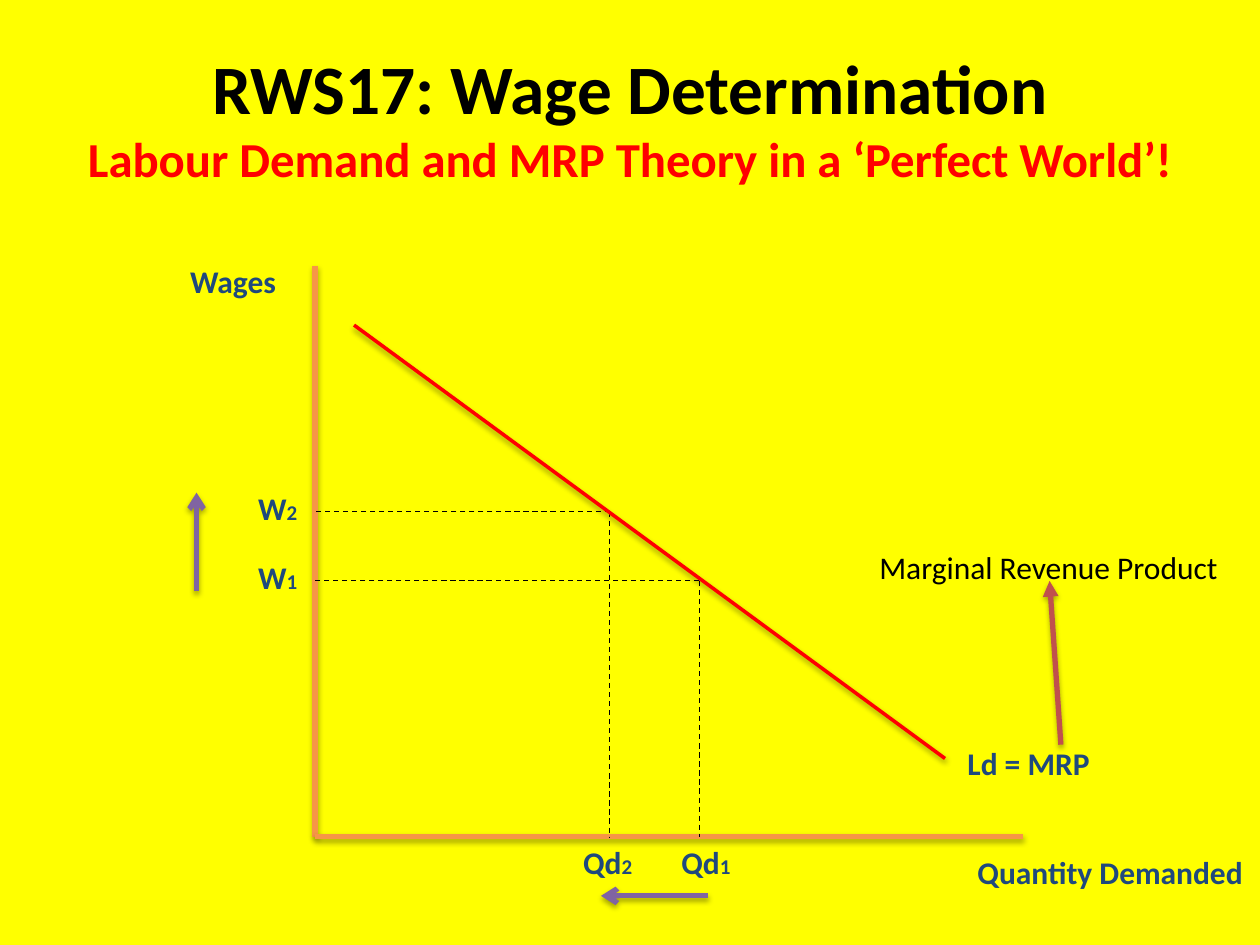
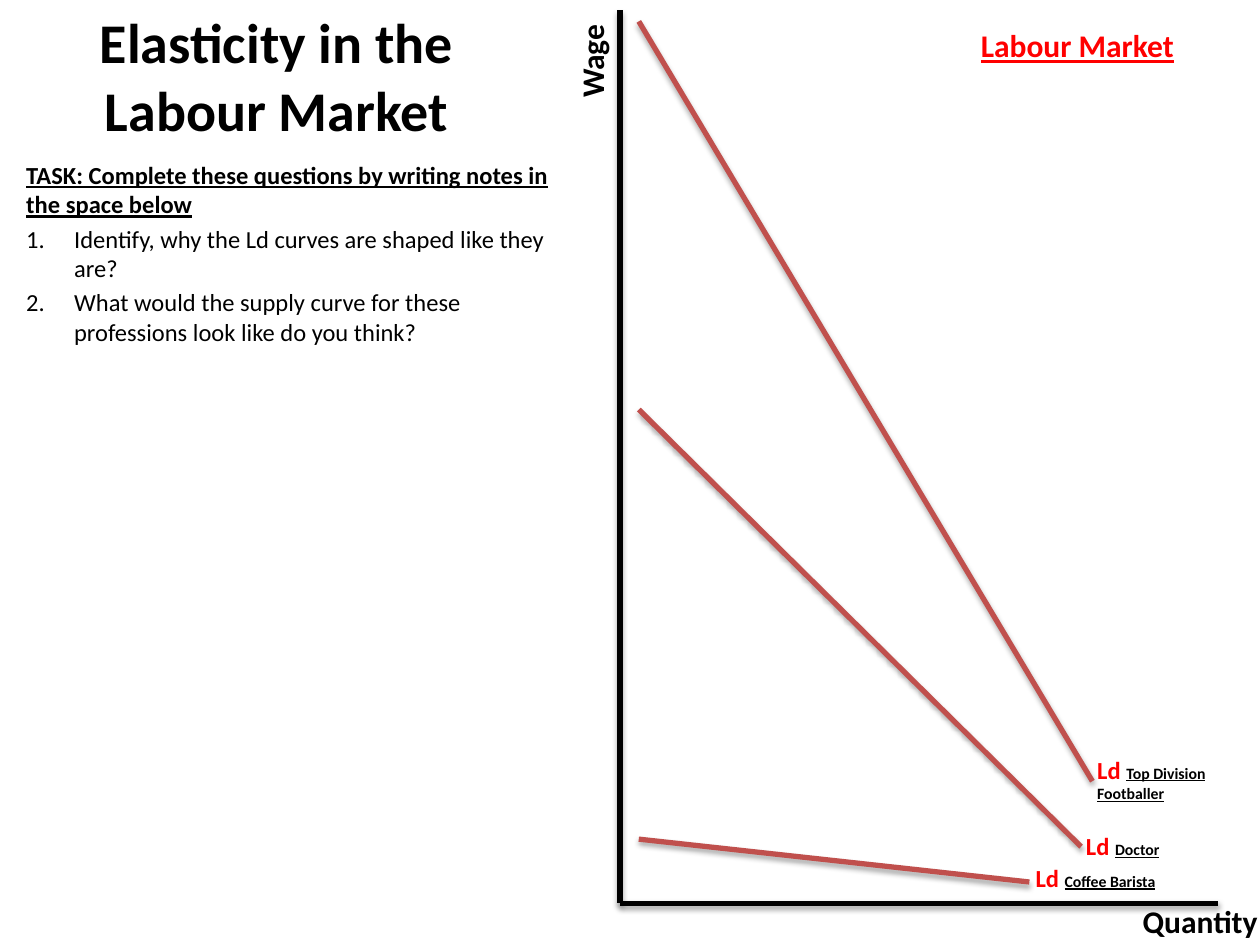
from typing import NamedTuple, Optional, Sequence

from lxml import etree
from pptx import Presentation
from pptx.dml.color import RGBColor
from pptx.enum.dml import MSO_LINE_DASH_STYLE as Dash
from pptx.enum.shapes import MSO_CONNECTOR as Connector
from pptx.enum.text import MSO_ANCHOR as Anchor, PP_ALIGN as Align
from pptx.oxml.ns import qn
from pptx.util import Inches, Pt

FONT = "Calibri"
BLACK, RED, YELLOW, WHITE = "000000", "FF0000", "FFFF00", "FFFFFF"
NAVY, ORANGE, PURPLE, BRICK = "1F497D", "F79646", "8064A2", "C0504D"
LABEL_HEIGHT = 0.4


class Run(NamedTuple):
    text: str
    size: float = 18
    color: str = BLACK
    bold: bool = True
    underline: bool = False


class Para(NamedTuple):
    runs: Sequence[Run]
    numbered: bool = False


class Line(NamedTuple):
    start: tuple[float, float]
    end: tuple[float, float]
    color: str = BLACK
    width: float = 3
    head: Optional[str] = None
    dashed: bool = False
    shadow: Optional[int] = 35


class Label(NamedTuple):
    left: float
    top: float
    width: float
    runs: Sequence[Run]
    height: float = LABEL_HEIGHT


def rgb(color: str) -> RGBColor:
    return RGBColor.from_string(color)


def add_slide(prs, background: str):
    s = prs.slides.add_slide(prs.slide_layouts[6])
    s.background.fill.solid()
    s.background.fill.fore_color.rgb = rgb(background)
    return s


def number_paragraph(p) -> None:
    """Give the paragraph an automatic number and a hanging indent."""
    pPr = p._p.get_or_add_pPr()
    pPr.set("marL", str(Inches(0.38)))
    pPr.set("indent", str(-Inches(0.38)))
    etree.SubElement(pPr, qn("a:buFont"), typeface="+mj-lt")
    etree.SubElement(pPr, qn("a:buAutoNum"), type="arabicPeriod")


def add_text(s, left: float, top: float, width: float, height: float,
             paras: Sequence[Para], *, wrap: bool = True, align=Align.LEFT,
             anchor=Anchor.TOP, space: float = 0, rotation: float = 0):
    """Draw a text box; a run that ends in a newline is followed by a line break."""
    sp = s.shapes.add_textbox(*map(Inches, (left, top, width, height)))
    sp.rotation = rotation
    tf = sp.text_frame
    tf.word_wrap = wrap
    tf.vertical_anchor = anchor
    for i, para in enumerate(paras):
        p = tf.add_paragraph() if i else tf.paragraphs[0]
        p.alignment = align
        if i:
            p.space_before = Pt(space)
        if para.numbered:
            number_paragraph(p)
        for run in para.runs:
            r = p.add_run()
            r.text = run.text.rstrip("\n")
            r.font.name = FONT
            r.font.size = Pt(run.size)
            r.font.bold = run.bold
            r.font.underline = run.underline
            r.font.color.rgb = rgb(run.color)
            if run.text.endswith("\n"):
                p.add_line_break()
    return sp


def add_title(s, left: float, top: float, width: float, runs: Sequence[Run]) -> None:
    add_text(s, left, top, width, 1.25, [Para(runs)],
             align=Align.CENTER, anchor=Anchor.MIDDLE)


def add_label(s, label: Label, **style) -> None:
    add_text(s, label.left, label.top, label.width, label.height,
             [Para(label.runs)], **style)


def add_line(s, line: Line) -> None:
    c = s.shapes.add_connector(Connector.STRAIGHT,
                               *map(Inches, (*line.start, *line.end)))
    c.line.color.rgb = rgb(line.color)
    c.line.width = Pt(line.width)
    if line.dashed:
        c.line.dash_style = Dash.DASH
    if line.head:
        etree.SubElement(c.line._get_or_add_ln(), qn("a:tailEnd"), type=line.head)
    effects = etree.SubElement(c._element.spPr, qn("a:effectLst"))
    if line.shadow:
        shadow = etree.SubElement(
            effects, qn("a:outerShdw"), blurRad=str(Pt(3.1)), dist=str(Pt(1.8)),
            dir="5400000", rotWithShape="0")
        color = etree.SubElement(shadow, qn("a:srgbClr"), val=BLACK)
        etree.SubElement(color, qn("a:alpha"), val=str(line.shadow * 1000))


def add_axes(s, origin: tuple[float, float], top: float, right: float,
             color: str) -> None:
    x, y = origin
    add_line(s, Line((x, top), origin, color))
    add_line(s, Line(origin, (right, y), color))


def build_wage_determination(prs) -> None:
    s = add_slide(prs, YELLOW)
    add_title(s, 0.5, 0.3, 9, [
        Run("RWS17: Wage Determination\n", 39.6),
        Run("Labour Demand and MRP Theory in a ‘Perfect World’!", 27.9, RED)])

    origin_x, origin_y = origin = (2.5, 6.64)
    add_axes(s, origin, 2.11, 8.12, ORANGE)
    for left, top, width, text in [(1.41, 2.03, 0.89, "Wages"),
                                   (7.66, 6.72, 2.33, "Quantity Demanded"),
                                   (7.58, 5.86, 1.18, "Ld = MRP")]:
        add_label(s, Label(left, top, width, [Run(text, color=NAVY)]), wrap=False)

    equilibria = [("1", 5.55, 4.61, 5.31), ("2", 4.84, 4.06, 4.53)]
    for number, quantity, wage, quantity_left in equilibria:
        for end in [(origin_x, wage), (quantity, origin_y)]:
            add_line(s, Line((quantity, wage), end, width=0.75,
                             dashed=True, shadow=None))
        for name, left, top, width in [("W", 1.95, wage - 0.23, 0.53),
                                       ("Qd", quantity_left, origin_y, 0.6)]:
            runs = [Run(name, color=NAVY), Run(number, 12, NAVY)]
            add_label(s, Label(left, top, width, runs), wrap=False)

    wage_rise = Line((1.56, 4.69), (1.56, 3.91), PURPLE, head="arrow")
    quantity_fall = Line((5.62, 7.11), (4.77, 7.11), PURPLE, head="arrow")
    demand = Line((2.81, 2.58), (7.5, 6.02), RED, 2, shadow=38)
    for line in (wage_rise, quantity_fall, demand):
        add_line(s, line)
    add_label(s, Label(6.88, 4.3, 2.92, [Run("Marginal Revenue Product", bold=False)]),
              wrap=False)
    add_line(s, Line((8.42, 5.91), (8.33, 4.61), BRICK, head="triangle"))


def build_elasticity(prs) -> None:
    s = add_slide(prs, WHITE)
    add_title(s, 0.04, -0.03, 4.31, [Run("Elasticity in the Labour Market", 32)])
    task = "TASK: Complete these questions by writing notes in the space below"
    questions = [
        "Identify, why the Ld curves are shaped like they are?",
        "What would the supply curve for these professions look like do you think?"]
    add_text(s, 0.11, 1.22, 4.59, 5.94,
             [Para([Run(task, 14, underline=True)])]
             + [Para([Run(q, 14, bold=False)], numbered=True) for q in questions],
             space=2.8)

    add_axes(s, (4.92, 7.17), 0.08, 9.67, BLACK)
    curves = [
        ("Coffee Barista", 6.66, (8.17, 7), (8.12, 6.8, 1.21), 0.34),
        ("Doctor", 3.25, (8.58, 6.72), (8.52, 6.55, 1.08), 0.34),
        ("Top Division Footballer", 0.17, (8.67, 6.2), (8.61, 5.94, 1.31), 0.5)]
    for job, start_y, end, place, height in curves:
        add_line(s, Line((5.07, start_y), end, BRICK))
        runs = [Run("Ld ", 14, RED), Run(job, 9, underline=True)]
        add_label(s, Label(*place, runs, height))

    add_label(s, Label(4.3, 0.28, 0.79, [Run("Wage")]), wrap=False, rotation=270)
    add_label(s, Label(8.97, 7.11, 1.12, [Run("Quantity")]), wrap=False)
    add_label(s, Label(7.64, 0.16, 1.82,
                       [Run("Labour Market", color=RED, underline=True)]),
              align=Align.CENTER)


def main() -> None:
    prs = Presentation()
    prs.slide_width, prs.slide_height = Inches(10), Inches(7.5)
    build_wage_determination(prs)
    build_elasticity(prs)
    prs.save("out.pptx")


if __name__ == "__main__":
    main()
